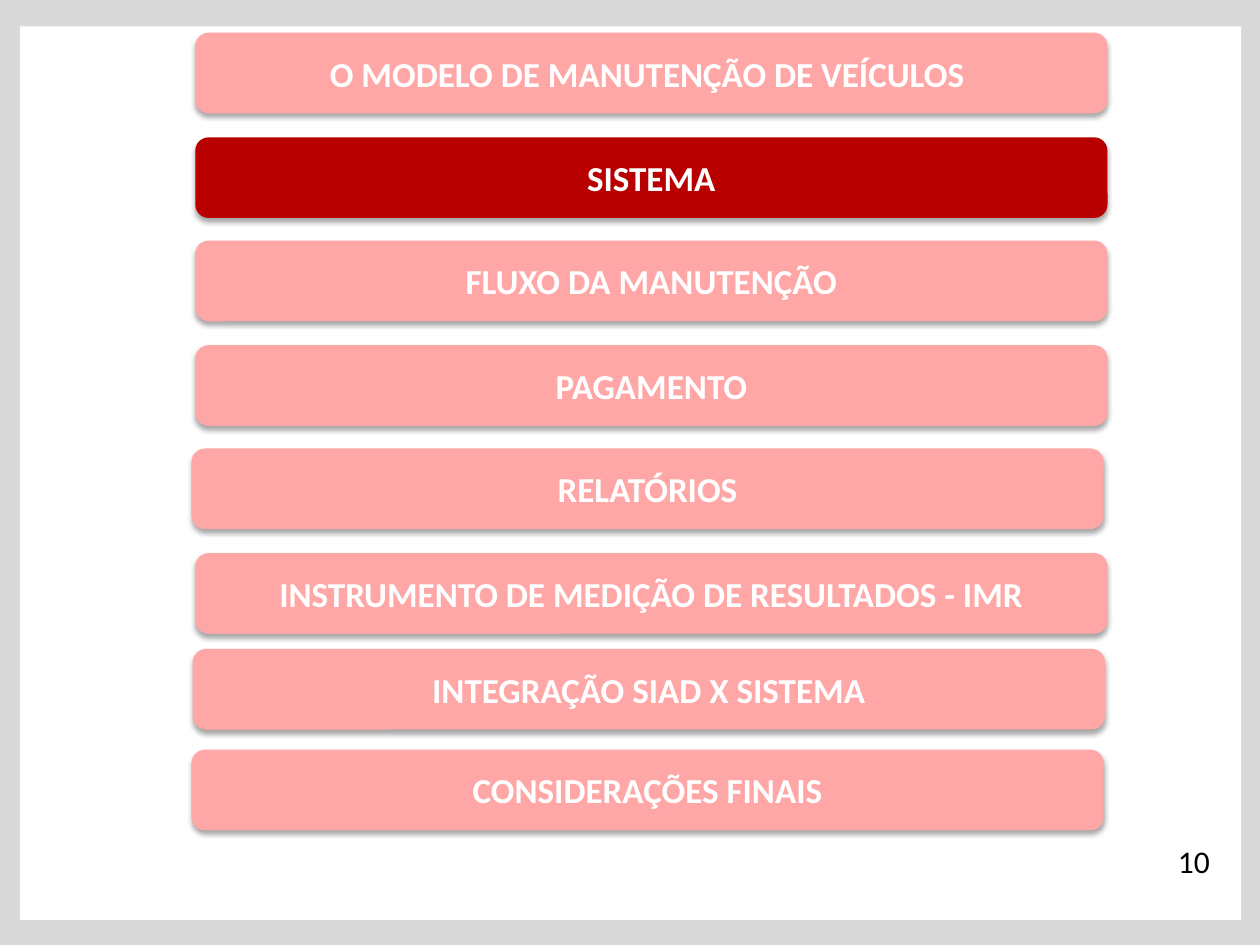
from lxml import etree
from pptx import Presentation
from pptx.dml.color import RGBColor
from pptx.enum import shapes, text
from pptx.oxml import ns
from pptx.util import Inches, Pt

GREY = RGBColor(0xD9, 0xD9, 0xD9)
WHITE = RGBColor(0xFF, 0xFF, 0xFF)
BLACK = RGBColor(0, 0, 0)
PINK = RGBColor(0xFF, 0xA7, 0xA7)
RED = RGBColor(0xB8, 0, 0)

# Agenda topics: title, left, top (inches)
TOPICS = [
    ("O MODELO DE MANUTENÇÃO DE VEÍCULOS ", 1.55, 0.26),
    ("SISTEMA", 1.55, 1.09),
    ("FLUXO DA MANUTENÇÃO", 1.55, 1.91),
    ("PAGAMENTO", 1.55, 2.74),
    ("RELATÓRIOS", 1.52, 3.56),
    ("INSTRUMENTO DE MEDIÇÃO DE RESULTADOS - IMR", 1.55, 4.39),
    ("INTEGRAÇÃO SIAD X SISTEMA", 1.53, 5.15),
    ("CONSIDERAÇÕES FINAIS", 1.52, 5.95),
]
CURRENT = 1
TOPIC_WIDTH, TOPIC_HEIGHT = 7.24, 0.64
PAGE_NUMBER = "10"

TOPIC_FONT = {"name": "Calibri", "size": Pt(20), "bold": True}
NUMBER_FONT = {"name": "Calibri", "size": Pt(18)}
SHADOW = {"blurRad": Pt(3.1), "dist": Pt(1.8), "dir": 90 * 60000, "rotWithShape": 0}


def add_block(kind, box, color):
    block = slide.shapes.add_shape(kind, *map(Inches, box))
    block.shadow.inherit = False
    block.fill.solid()
    block.fill.fore_color.rgb = color
    block.line.fill.background()
    return block


def write(frame, words, font_values, color):
    paragraph = frame.paragraphs[0]
    run = paragraph.add_run()
    run.text = words
    for key, value in font_values.items():
        setattr(run.font, key, value)
    run.font.color.rgb = color
    return paragraph


def add_shadow(block):
    effects = block.element.spPr.find(ns.qn("a:effectLst"))
    outer = etree.SubElement(effects, ns.qn("a:outerShdw"),
                             {key: str(value) for key, value in SHADOW.items()})
    tint = etree.SubElement(outer, ns.qn("a:srgbClr"), val=str(BLACK))
    etree.SubElement(tint, ns.qn("a:alpha"), val="35000")


deck = Presentation()
deck.slide_width, deck.slide_height = Inches(10), Inches(7.5)
slide = deck.slides.add_slide(deck.slide_layouts[6])

# Grey frame around the white page
add_block(shapes.MSO_SHAPE.RECTANGLE, (0, 0, 10, 7.5), GREY)
add_block(shapes.MSO_SHAPE.RECTANGLE, (0.16, 0.21, 9.69, 7.09), WHITE)

# Page number
number = slide.shapes.add_textbox(*map(Inches, (9.25, 6.63, 0.75, 0.4)))
number.text_frame.word_wrap = True
write(number.text_frame, PAGE_NUMBER, NUMBER_FONT, BLACK)

# Agenda, with the current topic in red
for index, (title, left, top) in enumerate(TOPICS):
    topic = add_block(shapes.MSO_SHAPE.ROUNDED_RECTANGLE,
                      (left, top, TOPIC_WIDTH, TOPIC_HEIGHT),
                      RED if index == CURRENT else PINK)
    add_shadow(topic)
    topic.text_frame.word_wrap = False
    topic.text_frame.vertical_anchor = text.MSO_ANCHOR.MIDDLE
    paragraph = write(topic.text_frame, title, TOPIC_FONT, WHITE)
    paragraph.alignment = text.PP_ALIGN.CENTER

deck.save("out.pptx")
